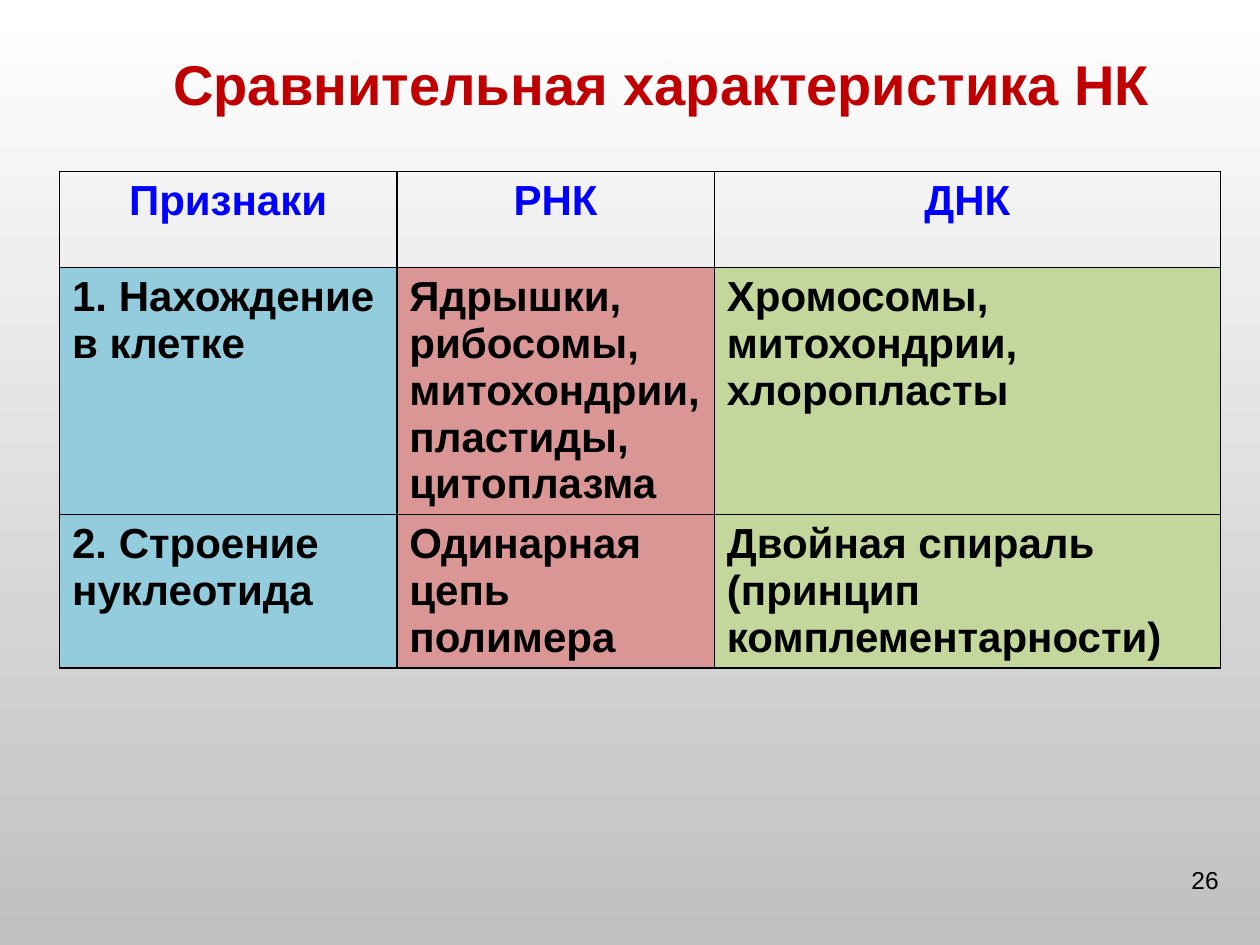
from lxml.etree import SubElement
from pptx import Presentation
from pptx.dml.color import RGBColor
from pptx.enum.text import MSO_ANCHOR, PP_ALIGN
from pptx.oxml.ns import qn
from pptx.util import Cm, Pt

TITLE = "Сравнительная характеристика НК"
NUMBER = "26"
ROWS = [
    ("Признаки", "РНК", "ДНК"),
    ("1. Нахождение в клетке",
     "Ядрышки, рибосомы, митохондрии, пластиды, цитоплазма",
     "Хромосомы, митохондрии, хлоропласты"),
    ("2. Строение нуклеотида",
     "Одинарная цепь полимера",
     "Двойная спираль (принцип комплементарности)"),
]
FILLS = ("93CDDD", "D99694", "C3D69B")
WIDTHS = (6.8, 6.4, 10.2)
HEIGHTS = (1.93, 4.98, 3.1)


def paint(color, code):
    color.rgb = RGBColor.from_string(code)


def write(frame, text, size, code, align, bold=True):
    frame.text = text
    para = frame.paragraphs[0]
    para.alignment = align
    font = para.runs[0].font
    font.name, font.size, font.bold = "Arial", Pt(size), bold
    paint(font.color, code)


def frame_cell(cell):
    props = cell._tc.get_or_add_tcPr()
    for side in ("lnL", "lnR", "lnT", "lnB"):
        line = SubElement(props, qn("a:" + side), w=str(Pt(1)))
        solid = SubElement(line, qn("a:solidFill"))
        SubElement(solid, qn("a:srgbClr"), val="000000")


def add_grid(slide):
    shape = slide.shapes.add_table(
        len(ROWS), len(WIDTHS), Cm(1.2), Cm(3.46), Cm(sum(WIDTHS)), Cm(sum(HEIGHTS)))
    table = shape.table
    table.first_row = table.horz_banding = False
    for col, width in zip(table.columns, WIDTHS):
        col.width = Cm(width)
    for r, texts in enumerate(ROWS):
        table.rows[r].height = Cm(HEIGHTS[r])
        for c, text in enumerate(texts):
            cell = table.cell(r, c)
            frame_cell(cell)
            if r == 0:
                cell.fill.background()
                write(cell.text_frame, text, 24, "0000FF", PP_ALIGN.CENTER)
            else:
                cell.fill.solid()
                paint(cell.fill.fore_color, FILLS[c])
                write(cell.text_frame, text, 24, "000000", PP_ALIGN.LEFT)


def main():
    deck = Presentation()
    deck.slide_width, deck.slide_height = Cm(25.4), Cm(19.05)
    slide = deck.slides.add_slide(deck.slide_layouts[5])

    back = slide.background.fill
    back.gradient()
    back.gradient_angle = 270
    for stop, code, place in zip(back.gradient_stops, ("FFFFFF", "C0C0C0"), (0, 1)):
        paint(stop.color, code)
        stop.position = place

    title = slide.shapes.title
    title.left, title.top = Cm(2.54), Cm(0.71)
    title.width, title.height = Cm(21.6), Cm(1.93)
    write(title.text_frame, TITLE, 32, "C00000", PP_ALIGN.CENTER)
    title.text_frame.vertical_anchor = MSO_ANCHOR.MIDDLE

    add_grid(slide)

    box = slide.shapes.add_textbox(Cm(18.9), Cm(17.32), Cm(5.92), Cm(1.32))
    box.text_frame.word_wrap = True
    write(box.text_frame, NUMBER, 14, "000000", PP_ALIGN.RIGHT, False)

    deck.save("out.pptx")


if __name__ == "__main__":
    main()
